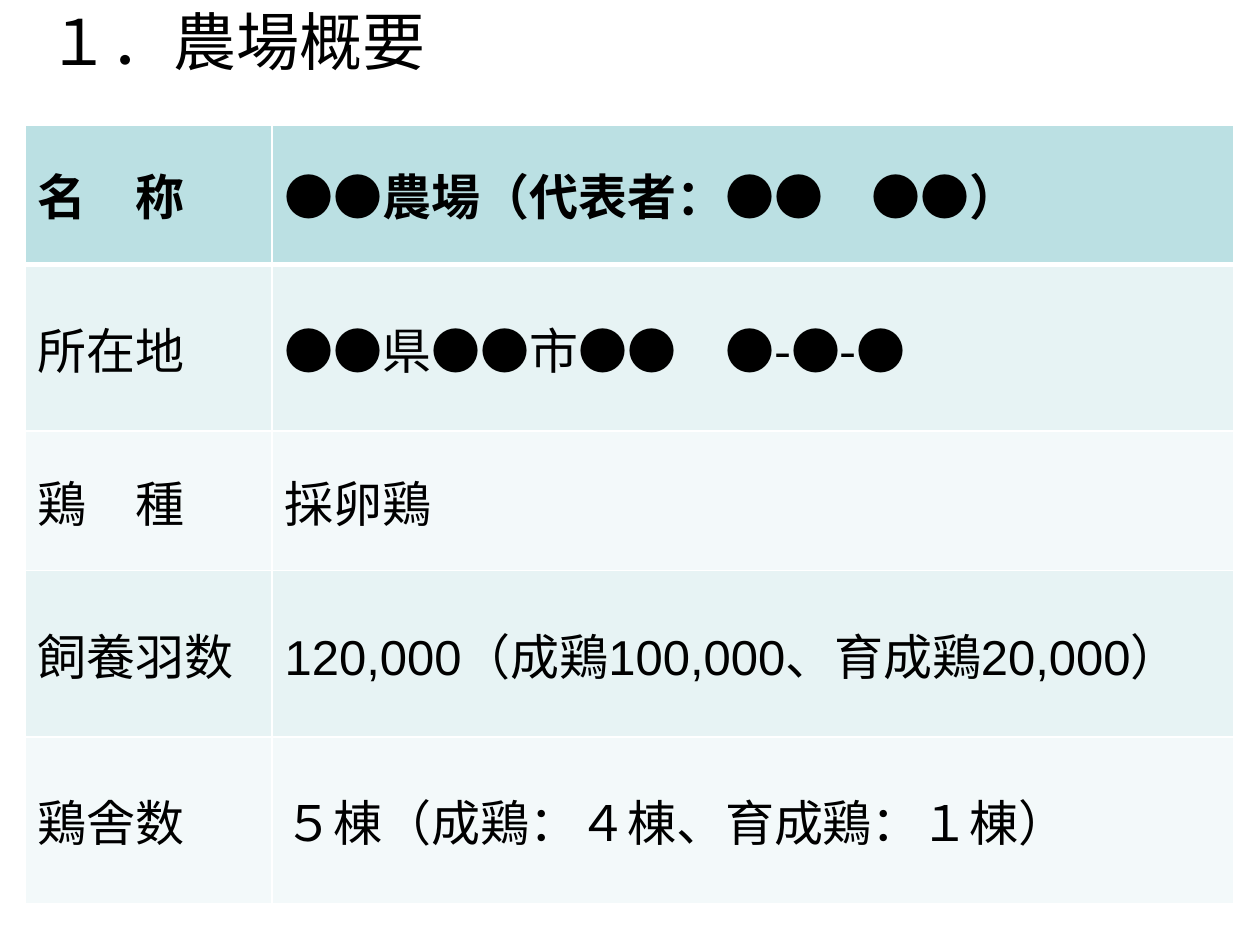
import lxml.etree
import pptx
import pptx.dml.color
import pptx.enum.text
import pptx.oxml.ns
import pptx.util

Inches = pptx.util.Inches
RGBColor = pptx.dml.color.RGBColor
qn = pptx.oxml.ns.qn

BLACK = RGBColor(0x00, 0x00, 0x00)
WHITE = RGBColor(0xFF, 0xFF, 0xFF)
HEAD = RGBColor(0xBB, 0xE0, 0xE3)
BANDS = [RGBColor(0xF3, 0xF9, 0xFA), RGBColor(0xE7, 0xF3, 0xF4)]
SANS = "Arial"
CJK = "Noto Sans CJK JP"

COLS = [1.96, 7.63]
# Each row: height, label, value, font of the value
ROWS = [
    (1.11, "名　称", "●●農場（代表者：●●　●●）", SANS),
    (1.32, "所在地", "●●県●●市●●　●-●-●", CJK),
    (1.11, "鶏　種", "採卵鶏", SANS),
    (1.32, "飼養羽数", "120,000（成鶏100,000、育成鶏20,000）", SANS),
    (1.32, "鶏舎数", "５棟（成鶏：４棟、育成鶏：１棟）", CJK),
]


def write(frame, text, size=28, bold=False, font=SANS):
    para = frame.paragraphs[0]
    para.alignment = pptx.enum.text.PP_ALIGN.LEFT
    run = para.add_run()
    run.text = text
    run.font.size = pptx.util.Pt(size)
    run.font.bold = bold
    run.font.name = font
    run.font.color.rgb = BLACK
    east = lxml.etree.SubElement(run.font._element, qn("a:ea"))
    east.set("typeface", CJK)


def edge(cell, widths):
    """Draw white borders; widths maps L, R, T, B, in that order, to points."""
    props = cell._tc.get_or_add_tcPr()
    for spot, (side, width) in enumerate(widths.items()):
        line = lxml.etree.Element(qn(f"a:ln{side}"), w=str(pptx.util.Pt(width)))
        fill = lxml.etree.SubElement(line, qn("a:solidFill"))
        lxml.etree.SubElement(fill, qn("a:srgbClr"), val=str(WHITE))
        props.insert(spot, line)


def add_title(slide, text):
    title = slide.shapes.title
    title.left, title.top = Inches(0.28), Inches(-0.03)
    title.width, title.height = Inches(6.14), Inches(0.71)
    frame = title.text_frame
    frame.word_wrap = True
    frame.auto_size = pptx.enum.text.MSO_AUTO_SIZE.NONE
    frame.vertical_anchor = pptx.enum.text.MSO_ANCHOR.TOP
    write(frame, text, size=36)


def add_grid(slide):
    high = sum(row[0] for row in ROWS)
    table = slide.shapes.add_table(
        len(ROWS), len(COLS), Inches(0.2), Inches(0.99),
        Inches(sum(COLS)), Inches(high)).table
    for col, width in zip(table.columns, COLS):
        col.width = Inches(width)
    for r, (height, label, value, font) in enumerate(ROWS):
        table.rows[r].height = Inches(height)
        for c, (text, face) in enumerate([(label, SANS), (value, font)]):
            cell = table.cell(r, c)
            cell.vertical_anchor = pptx.enum.text.MSO_ANCHOR.MIDDLE
            cell.fill.solid()
            cell.fill.fore_color.rgb = BANDS[r % 2] if r else HEAD
            edge(cell, {"L": 1, "R": 1, "T": 3 if r == 1 else 1,
                        "B": 1 if r else 3})
            write(cell.text_frame, text, bold=r == 0, font=face)


def main():
    deck = pptx.Presentation()
    deck.slide_width, deck.slide_height = Inches(10), Inches(7.5)
    slide = deck.slides.add_slide(deck.slide_layouts[5])
    add_grid(slide)
    add_title(slide, "１．農場概要")
    deck.save("out.pptx")


if __name__ == "__main__":
    main()
